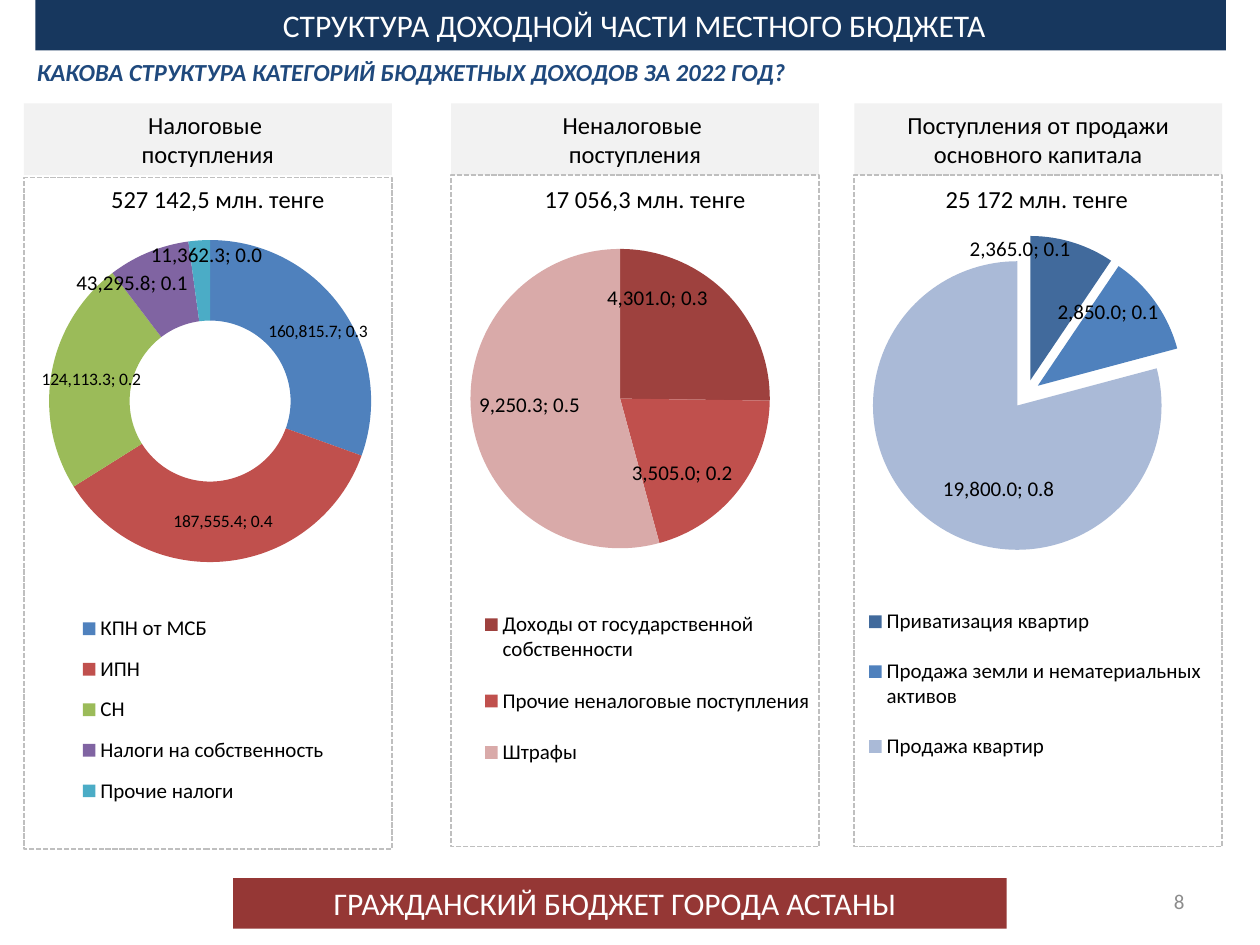
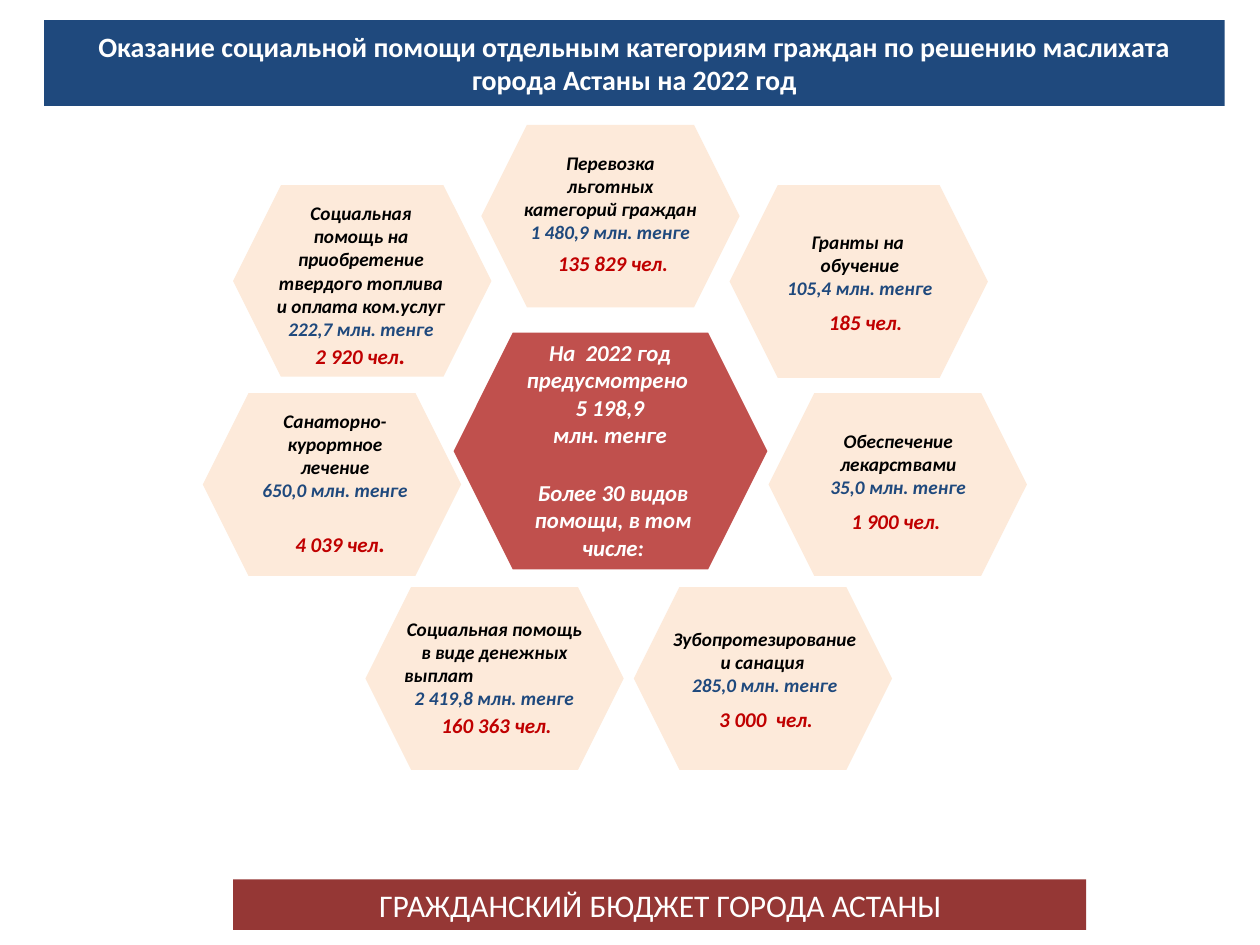
from dataclasses import dataclass, replace

from lxml import etree
from pptx import Presentation
from pptx import util as u
from pptx.chart.data import CategoryChartData
from pptx.dml.color import RGBColor
from pptx.enum import chart as charts, dml, shapes, text
from pptx.oxml.ns import qn

CENTER, LEFT, RIGHT = text.PP_ALIGN.CENTER, text.PP_ALIGN.LEFT, text.PP_ALIGN.RIGHT
TOP, MIDDLE = text.MSO_ANCHOR.TOP, text.MSO_ANCHOR.MIDDLE
RECTANGLE, HEXAGON = shapes.MSO_SHAPE.RECTANGLE, shapes.MSO_SHAPE.HEXAGON


@dataclass(frozen=True)
class Style:
    size: int
    color: str
    bold: bool = False
    italic: bool = False
    align: int = CENTER


class Theme:
    font = "Calibri"
    navy, blue, brick, red = "17375E", "1F497D", "953735", "C0504D"
    header, frame, peach = "F2F2F2", "BFBFBF", "FDEADA"
    band = Style(18, "FFFFFF")
    heading = Style(16, "FFFFFF", bold=True)
    question = Style(14, blue, True, True)
    body = Style(14, "000000")
    label = Style(12, "000000")
    small_label = Style(10, "000000")
    number = Style(12, "8C8C8C", align=RIGHT)
    core = Style(13, "FFFFFF", True, True)
    caption = Style(11, "000000", True, True)
    amount = replace(caption, color=blue)
    people = Style(12, "C00000", True, True)
    full_stop = replace(people, size=14)
    tax_colors = ["4F81BD", red, "9BBB59", "8064A2", "4BACC6"]
    other_colors = ["9E413E", red, "D9AAA9"]
    sale_colors = ["416A9C", "4F81BD", "AABAD7"]


def set_font(font, style):
    font.name, font.size = Theme.font, u.Pt(style.size)
    font.bold, font.italic = style.bold, style.italic
    font.color.rgb = RGBColor.from_string(style.color)


def chart_layout(**values):
    layout = etree.Element(qn("c:layout"))
    manual = etree.SubElement(layout, qn("c:manualLayout"))
    for name, value in values.items():
        etree.SubElement(manual, qn(f"c:{name}")).set("val", str(value))
    return layout


def box_layout(x, y, w, h, **target):
    return chart_layout(**target, xMode="edge", yMode="edge", x=x, y=y, w=w, h=h)


class Builder:
    """Draws the themed elements of the deck on the current slide."""

    def __init__(self):
        self.deck = Presentation()
        self.deck.slide_width, self.deck.slide_height = u.Inches(10), u.Inches(7.5)

    def page(self):
        self.slide = self.deck.slides.add_slide(self.deck.slide_layouts[6])

    def add_lines(self, box, lines, style, anchor):
        frame = box.text_frame
        frame.word_wrap, frame.vertical_anchor = True, anchor
        for index, line in enumerate(lines):
            para = frame.paragraphs[0] if index == 0 else frame.add_paragraph()
            spans = line if isinstance(line, list) else [line]
            spans = [span if isinstance(span, tuple) else (span, style) for span in spans]
            para.alignment = spans[0][1].align
            set_font(para.font, spans[0][1])
            for words, span_style in spans:
                span = para.add_run()
                span.text = words
                if span_style != spans[0][1]:
                    set_font(span.font, span_style)

    def text(self, at, lines, style, anchor=TOP):
        box = self.slide.shapes.add_textbox(*map(u.Inches, at))
        self.add_lines(box, lines, style, anchor)

    def shape(self, at, fill=None, line=None, kind=RECTANGLE, lines=(), style=None):
        box = self.slide.shapes.add_shape(kind, *map(u.Inches, at))
        box.shadow.inherit = False
        if fill:
            box.fill.solid()
            box.fill.fore_color.rgb = RGBColor.from_string(fill)
        else:
            box.fill.background()
        if line:
            box.line.color.rgb = RGBColor.from_string(line)
            box.line.width = u.Pt(1)
            box.line.dash_style = dml.MSO_LINE.SQUARE_DOT
        else:
            box.line.fill.background()
        if lines:
            self.add_lines(box, lines, style, MIDDLE)

    def footer(self, top, width, text_left, text_width):
        self.shape((1.85, top, width, 0.4), Theme.brick)
        self.text((text_left, top, text_width, 0.4),
                  ["ГРАЖДАНСКИЙ БЮДЖЕТ ГОРОДА АСТАНЫ"], Theme.band)

    def chart(self, kind, at, items, colors, plot, legend, offsets, explosion=0, small=()):
        data = CategoryChartData(number_format="#,##0.0")
        data.categories = list(items)
        data.add_series("Series 1", items.values())
        chart = self.slide.shapes.add_chart(kind, *map(u.Inches, at), data).chart
        chart.has_title = False
        set_font(chart.font, Theme.label)
        chart.plots[0].vary_by_categories = True
        chart.has_legend = True
        chart.legend.position = charts.XL_LEGEND_POSITION.BOTTOM
        chart.legend.include_in_layout = False
        set_font(chart.legend.font, Theme.label)
        legend_xml = chart.legend._element
        for old in legend_xml.findall(qn("c:layout")):
            legend_xml.remove(old)
        legend_xml.find(qn("c:legendPos")).addnext(box_layout(*legend))
        plot_area = chart._chartSpace.chart.plotArea
        for old in plot_area.findall(qn("c:layout")):
            plot_area.remove(old)
        plot_area.insert(0, box_layout(*plot, layoutTarget="inner"))
        series = chart.plots[0].series[0]
        if explosion:
            element = etree.Element(qn("c:explosion"), val=str(explosion))
            series._element.find(qn("c:tx")).addnext(element)
        for index, color in enumerate(colors):
            fill = series.points[index].format.fill
            fill.solid()
            fill.fore_color.rgb = RGBColor.from_string(color)
        self.label(series, kind, offsets, small)

    def label(self, series, kind, offsets, small):
        labels = series.data_labels
        set_font(labels.font, Theme.label)
        labels.number_format, labels.number_format_is_linked = "#,##0.0", False
        labels.show_value = labels.show_percentage = True
        is_pie = kind == charts.XL_CHART_TYPE.PIE
        if is_pie:
            labels.position = charts.XL_LABEL_POSITION.INSIDE_END
        for index in sorted({*offsets, *small}):
            label = series.points[index].data_label
            set_font(label.font, Theme.small_label if index in small else Theme.label)
            if is_pie:
                label.position = charts.XL_LABEL_POSITION.INSIDE_END
        for element in labels._element.findall(qn("c:dLbl")):
            index = element.find(qn("c:idx"))
            number = etree.Element(qn("c:numFmt"), formatCode="#,##0.0", sourceLinked="0")
            index.addnext(number)
            offset = offsets.get(int(index.get("val")))
            if offset:
                index.addnext(chart_layout(x=offset[0], y=offset[1]))
            element.find(qn("c:showPercent")).set("val", "1")
        for element in labels._element.findall(".//" + qn("c:showPercent")):
            separator = etree.Element(qn("c:separator"))
            separator.text = "; "
            bubble = element.getparent().find(qn("c:showBubbleSize"))
            (element if bubble is None else bubble).addnext(separator)


def income_slide(build):
    build.page()
    build.footer(6.97, 6.14, 2.32, 5.12)
    build.shape((0.28, 0, 9.45, 0.4), Theme.navy)
    build.text((1.02, 0, 8.03, 0.4), ["СТРУКТУРА ДОХОДНОЙ ЧАСТИ МЕСТНОГО БЮДЖЕТА"], Theme.band)
    build.text((0.19, 0.4, 6.15, 0.34),
               ["КАКОВА СТРУКТУРА КАТЕГОРИЙ БЮДЖЕТНЫХ ДОХОДОВ ЗА 2022 ГОД?"], Theme.question)
    columns = [
        (0.19, 1.41, ["Налоговые ", "поступления"], (0.51, 2.44), "527 142,5 млн. тенге"),
        (3.58, 1.39, ["Неналоговые ", "поступления"], (3.98, 2.28), "17 056,3 млн. тенге"),
        (6.78, 1.39, ["Поступления от продажи основного капитала"], (7.13, 2.2),
         "25 172 млн. тенге"),
    ]
    for left, top, heading, (total_left, total_width), total in columns:
        build.shape((left, 0.82, 2.92, 0.57), Theme.header, lines=heading, style=Theme.body)
        build.shape((left, top, 2.92, 5.33), line=Theme.frame)
        build.text((total_left, 1.41, total_width, 0.34), [total], Theme.body)
    taxes = {"КПН от МСБ": 160815.7, "ИПН": 187555.4, "СН": 124113.3,
             "Налоги на собственность": 43295.8, "Прочие налоги": 11362.3}
    others = {"Доходы от государственной собственности": 4301,
              "Прочие неналоговые поступления": 3505, "Штрафы": 9250.3}
    sales = {"Приватизация квартир": 2365, "Продажа земли и нематериальных активов": 2850,
             "Продажа квартир": 19800}
    pie = charts.XL_CHART_TYPE.PIE
    build.chart(charts.XL_CHART_TYPE.DOUGHNUT, (-0.15, 1.6, 3.6, 4.95), taxes,
                Theme.tax_colors, (0.15, 0.06, 0.71, 0.52), (0.19, 0.64, 0.6, 0.35),
                {0: (0.02, 0), 3: (-0.07, -0.01), 4: (0.01, -0.04)}, small=(0, 1, 2))
    build.chart(pie, (3.32, 1.58, 3.6, 4.95), others, Theme.other_colors,
                (0.11, 0.08, 0.67, 0.48), (0.12, 0.62, 0.77, 0.33), {0: (-0.03, -0.02)})
    build.chart(pie, (6.38, 1.47, 3.6, 4.95), sales, Theme.sale_colors,
                (0.14, 0.08, 0.7, 0.51), (0.12, 0.64, 0.78, 0.32),
                {0: (0, -0.02), 1: (0.02, -0.01), 2: (0.02, -0.02)}, explosion=10)
    build.text((7.17, 6.95, 2.33, 0.4), ["8"], Theme.number, MIDDLE)


def aid_slide(build):
    build.page()
    build.shape((0.35, 0.16, 9.37, 0.68), Theme.blue, style=Theme.heading, lines=[
        "Оказание социальной помощи отдельным категориям граждан по решению маслихата "
        "города Астаны на 2022 год"])
    build.footer(6.98, 6.77, 2.09, 6.3)
    build.shape((3.6, 2.64, 2.49, 1.88), Theme.red, kind=HEXAGON)
    build.text((3.97, 2.64, 1.74, 0.97),
               ["На  2022 год предусмотрено ", "5 198,9", "млн. тенге"], Theme.core)
    build.text((3.9, 3.75, 1.93, 0.76), ["Более 30 видов помощи, в том числе:"], Theme.core)
    stop = (".", Theme.full_stop)
    aids = [
        ((3.82, 0.99, 1.45), (4.06, 1.15, 1.57, 0.84),
         ["Перевозка льготных категорий граждан"], "1 480,9 млн. тенге",
         (4.13, 1.94, 1.47, 0.3), ["135 829 чел."]),
        ((5.79, 1.47, 1.53), (6.02, 1.78, 1.61, 0.66),
         ["Гранты на ", "обучение"], "105,4 млн. тенге",
         (6.34, 2.41, 1.06, 0.3), ["185 чел."]),
        ((6.1, 3.12, 1.45), (6.26, 3.36, 1.74, 0.66),
         ["Обеспечение лекарствами"], "35,0 млн. тенге",
         (6.34, 3.99, 1.54, 0.3), ["1 900 чел."]),
        ((5.03, 4.66, 1.45), (5.24, 4.93, 1.66, 0.66),
         ["Зубопротезирование и санация "], "285,0 млн. тенге",
         (5.39, 5.56, 1.38, 0.3), ["3 000  чел."]),
        ((2.9, 4.66, 1.45), (3.11, 4.85, 1.63, 0.84),
         ["Социальная помощь в виде денежных", ("выплат", replace(Theme.caption, align=LEFT))],
         "2 419,8 млн. тенге", (3.25, 5.61, 1.38, 0.3), ["160 363 чел."]),
        ((1.61, 3.12, 1.45), (1.93, 3.2, 1.46, 0.84),
         ["Санаторно-курортное лечение"], "650,0 млн. тенге",
         (2.01, 4.14, 1.38, 0.34), ["4 039 чел", stop]),
        ((1.85, 1.47, 1.52), (2.09, 1.55, 1.55, 1.21),
         ["Социальная помощь на приобретение твердого топлива и оплата ком.услуг"],
         "222,7 млн. тенге", (2.17, 2.65, 1.38, 0.34), ["2 920 чел", stop]),
    ]
    for (left, top, height), caption_at, caption, amount, people_at, people in aids:
        build.shape((left, top, 2.05, height), Theme.peach, kind=HEXAGON)
        build.text(caption_at, [*caption, (amount, Theme.amount)], Theme.caption)
        build.text(people_at, [people], Theme.people)


def main():
    build = Builder()
    income_slide(build)
    aid_slide(build)
    build.deck.save("out.pptx")


if __name__ == "__main__":
    main()
